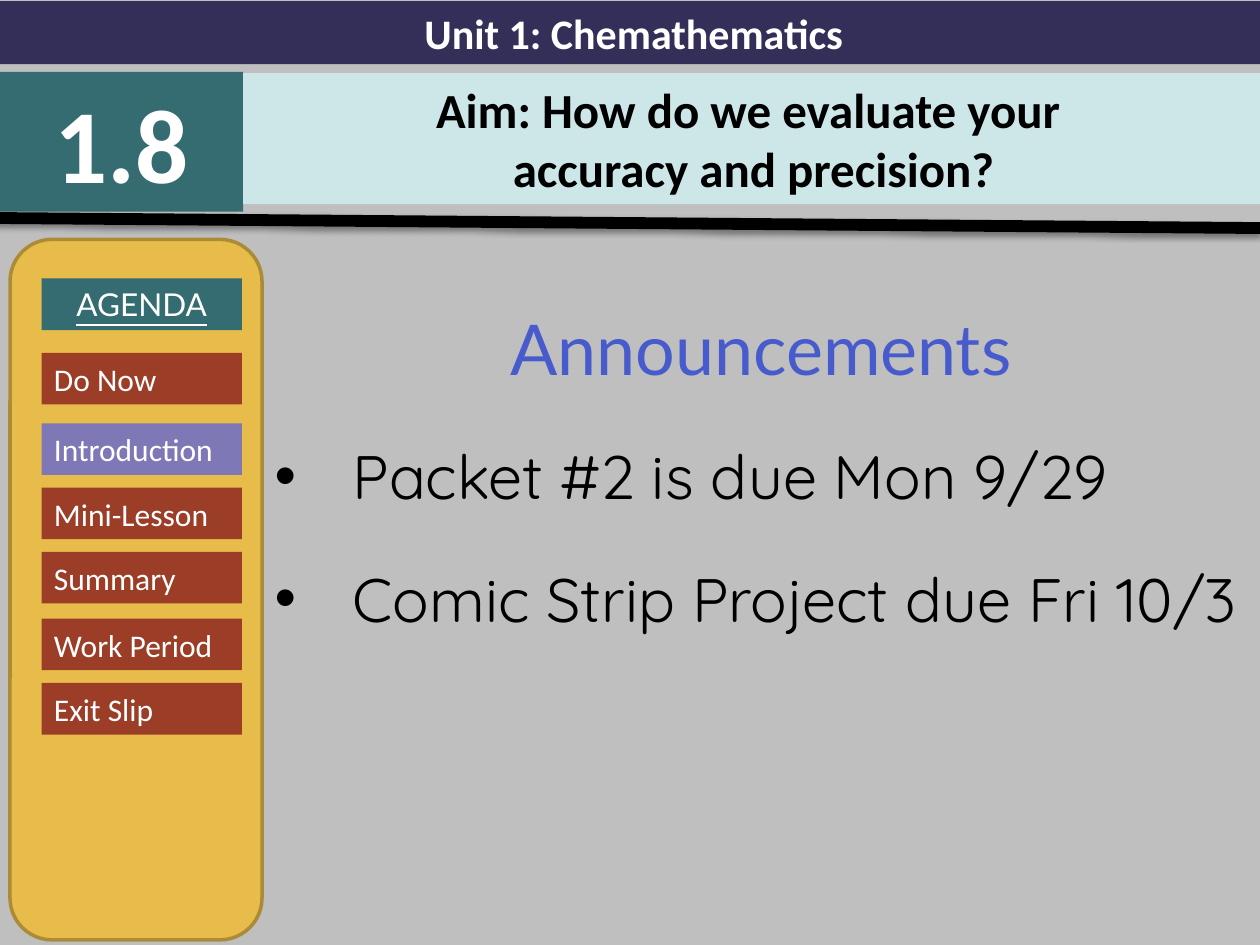
from lxml import etree
from pptx import Presentation
from pptx import util as u
from pptx.dml.color import RGBColor
from pptx.enum import shapes, text
from pptx.oxml import ns

GRAY = RGBColor(0xBF, 0xBF, 0xBF)
NAVY = RGBColor(0x34, 0x2F, 0x59)
TEAL = RGBColor(0x34, 0x6C, 0x71)
PALE = RGBColor(0xCD, 0xE6, 0xE8)
GOLD = RGBColor(0xE8, 0xBC, 0x4A)
BRONZE = RGBColor(0xAC, 0x8B, 0x37)
RUST = RGBColor(0x9C, 0x3D, 0x28)
LILAC = RGBColor(0x7E, 0x78, 0xB7)
BLUE = RGBColor(0x47, 0x5B, 0xCD)
BLACK = RGBColor(0, 0, 0)
WHITE = RGBColor(255, 255, 255)

CENTER, LEFT = text.PP_ALIGN.CENTER, text.PP_ALIGN.LEFT


def add_xml(parent, tag, **attributes):
    return etree.SubElement(parent, ns.qn(tag), attributes)


def write(paragraph, words, size=18, font="Calibri", color=WHITE, bold=False,
          underline=False, align=LEFT, spacing=None):
    paragraph.alignment = align
    paragraph.line_spacing = spacing
    run = paragraph.add_run()
    run.text = words
    run.font.size = u.Pt(size)
    run.font.name = font
    run.font.bold = bold
    run.font.underline = underline
    run.font.color.rgb = color


class LessonSlide:
    CELL = u.Inches(0.1)

    def __init__(self, deck):
        self.slide = deck.slides.add_slide(deck.slide_layouts[0])
        self.slide.background.fill.solid()
        self.slide.background.fill.fore_color.rgb = GRAY

    def cells(self, *counts):
        return [round(count * self.CELL) for count in counts]

    def place(self, holder, area):
        holder.left, holder.top, holder.width, holder.height = self.cells(*area)
        holder.text_frame.auto_size = text.MSO_AUTO_SIZE.NONE

    def heading(self, area, fill, words, **style):
        band = self.slide.shapes.title
        self.place(band, area)
        band.fill.solid()
        band.fill.fore_color.rgb = fill
        band.text_frame.vertical_anchor = text.MSO_ANCHOR.MIDDLE
        write(band.text_frame.paragraphs[0], words, align=CENTER, **style)

    def box(self, area, fill, lines=(), outline=None,
            kind=shapes.MSO_SHAPE.RECTANGLE, **style):
        block = self.slide.shapes.add_shape(kind, *self.cells(*area))
        block.shadow.inherit = False
        block.fill.solid()
        block.fill.fore_color.rgb = fill
        if outline:
            block.line.color.rgb = outline
            block.line.width = u.Pt(2)
        else:
            block.line.fill.background()
        frame = block.text_frame
        frame.vertical_anchor = text.MSO_ANCHOR.MIDDLE
        for index, words in enumerate(lines):
            write(frame.add_paragraph() if index else frame.paragraphs[0],
                  words, **style)

    def announcements(self, area, heading, notices):
        body = self.slide.placeholders[1]
        self.place(body, area)
        frame = body.text_frame
        write(frame.paragraphs[0], heading, size=40, font="Lato", color=BLUE,
              align=CENTER, spacing=1.5)
        for notice in notices:
            paragraph = frame.add_paragraph()
            write(paragraph, notice, size=35, font="Quicksand", color=BLACK,
                  spacing=1.5)
            properties = paragraph._p.get_or_add_pPr()
            indent = u.Inches(0.62)
            properties.set("marL", str(indent))
            properties.set("indent", str(-indent))
            add_xml(properties, "a:buFont", typeface="Arial")
            add_xml(properties, "a:buChar", char="•")

    def rule(self, start, end, width):
        line = self.slide.shapes.add_connector(
            shapes.MSO_CONNECTOR.STRAIGHT, *self.cells(*start, *end))
        line.line.color.rgb = BLACK
        line.line.width = u.Pt(width)
        effects = add_xml(line._element.spPr, "a:effectLst")
        shadow = add_xml(effects, "a:outerShdw", blurRad=str(u.Pt(3.1)),
                         dist=str(u.Pt(1.6)), dir="5400000", rotWithShape="0")
        shade = add_xml(shadow, "a:srgbClr", val=str(BLACK))
        add_xml(shade, "a:alpha", val="38000")

    def agenda(self, left, steps, current):
        self.box((0.8, 19, 20, 55.6), GOLD, outline=BRONZE,
                 kind=shapes.MSO_SHAPE.ROUNDED_RECTANGLE)
        self.box((left, 22.1, 15.9, 4.1), TEAL, ["AGENDA"], font="Lato",
                 underline=True, align=CENTER)
        for step, top in steps.items():
            self.box((left, top, 15.9, 4.1),
                     LILAC if step == current else RUST, [step])


def main():
    deck = Presentation()
    deck.slide_width, deck.slide_height = u.Inches(10), u.Inches(7.5)
    lesson = LessonSlide(deck)
    lesson.announcements((20.8, 20.4, 79.2, 54.6), "Announcements",
                         ["Packet #2 is due Mon 9/29",
                          "Comic Strip Project due Fri 10/3"])
    lesson.heading((0, 0.1, 100.6, 5), NAVY, "Unit 1: Chemathematics",
                   size=24, bold=True)
    lesson.box((0, 5.7, 19.3, 11.1), TEAL, ["1.8"], size=60, bold=True,
               align=CENTER)
    lesson.box((19.3, 5.8, 81, 10.4), PALE,
               ["Aim: How do we evaluate your ", "accuracy and precision?"],
               size=28, color=BLACK, bold=True, align=CENTER)
    lesson.rule((-0.5, 17.3), (100, 18.1), 6.75)
    lesson.agenda(3.3, {"Do Now": 28, "Introduction": 33.6,
                        "Mini-Lesson": 38.7, "Summary": 43.8,
                        "Work Period": 49.1, "Exit Slip": 54.2},
                  current="Introduction")
    deck.save("out.pptx")


if __name__ == "__main__":
    main()
